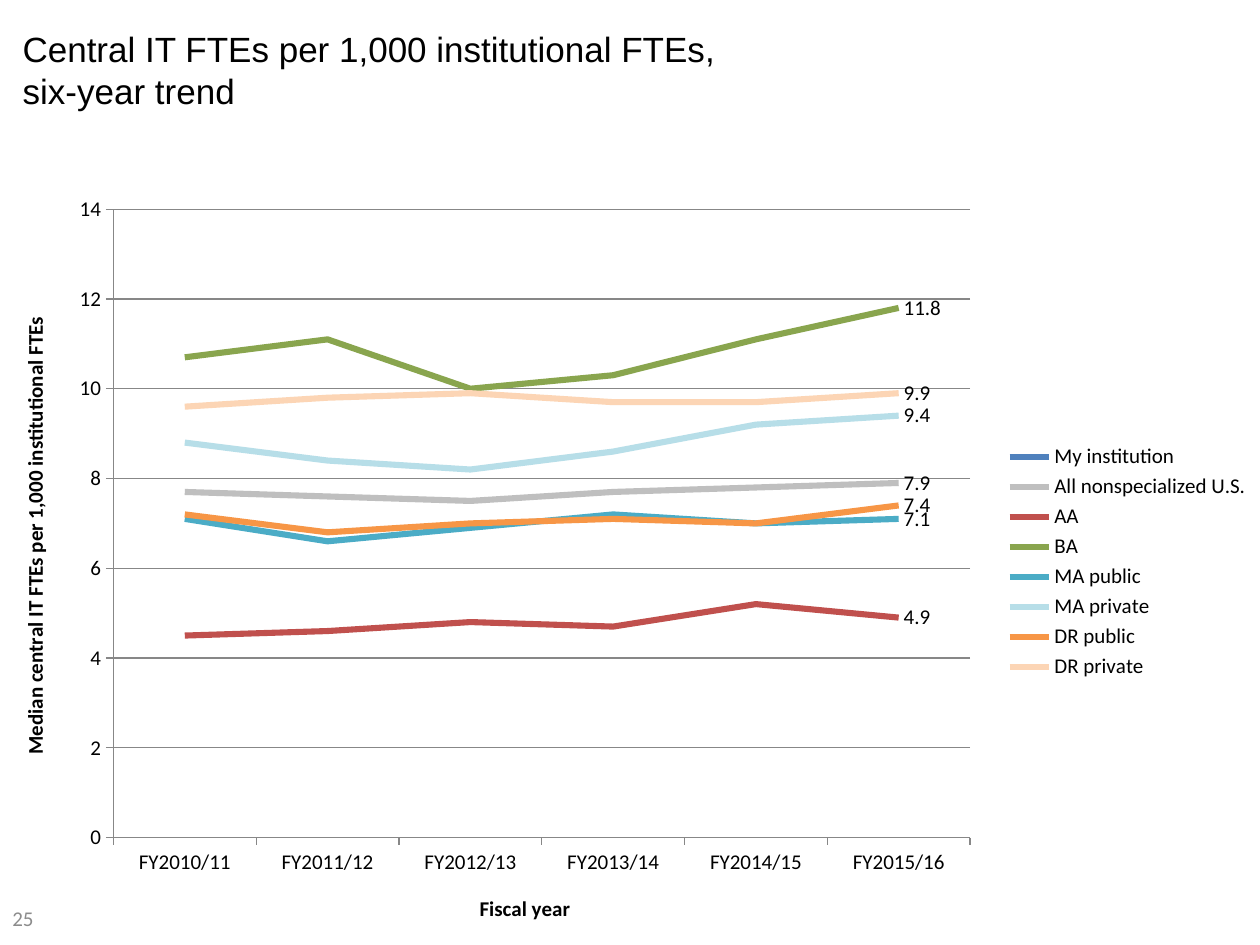
import dataclasses

import pptx
import pptx.chart.data
import pptx.dml.color
import pptx.enum.chart
import pptx.enum.text
import pptx.oxml
import pptx.oxml.ns
import pptx.util

Cm = pptx.util.Cm
Pt = pptx.util.Pt


@dataclasses.dataclass(frozen=True)
class Theme:
    """Colours, fonts and type sizes of the slide."""
    title_font: str = "Arial"
    body_font: str = "Calibri"
    title_size: int = 20
    body_size: int = 12
    line_width: float = 3.5
    ink: str = "000000"
    muted: str = "8C8C8C"
    grid: str = "878787"


THEME = Theme()
CATEGORIES = ["FY2010/11", "FY2011/12", "FY2012/13",
              "FY2013/14", "FY2014/15", "FY2015/16"]
SERIES = [
    ("My institution", "4F81BD", [None] * 6),
    ("All nonspecialized U.S.", "BFBFBF", [7.7, 7.6, 7.5, 7.7, 7.8, 7.9]),
    ("AA", "C0504D", [4.5, 4.6, 4.8, 4.7, 5.2, 4.9]),
    ("BA", "89A54E", [10.7, 11.1, 10, 10.3, 11.1, 11.8]),
    ("MA public", "4BACC6", [7.1, 6.6, 6.9, 7.2, 7, 7.1]),
    ("MA private", "B7DEE8", [8.8, 8.4, 8.2, 8.6, 9.2, 9.4]),
    ("DR public", "F79646", [7.2, 6.8, 7, 7.1, 7, 7.4]),
    ("DR private", "FCD5B5", [9.6, 9.8, 9.9, 9.7, 9.7, 9.9]),
]


def rgb(value):
    """Return a colour from its hex string."""
    return pptx.dml.color.RGBColor.from_string(value)


def style_font(font, name, size, color, bold=False):
    """Set the face, size, colour and weight of a font."""
    font.name, font.size, font.bold = name, Pt(size), bold
    font.color.rgb = rgb(color)


def style_line(line, color, width):
    """Set the colour and width of a line."""
    line.color.rgb = rgb(color)
    line.width = Pt(width)


def set_layout(parent, index, box, inner=False):
    """Fix a chart part to a box given in fractions of the chart."""
    for old in parent.findall(pptx.oxml.ns.qn("c:layout")):
        parent.remove(old)
    target = '<c:layoutTarget val="inner"/>' if inner else ""
    modes = "".join(f'<c:{k}Mode val="edge"/>' for k in "xy")
    sizes = "".join(f'<c:{k} val="{v}"/>' for k, v in zip("xywh", box))
    parent.insert(index, pptx.oxml.parse_xml(
        f'<c:layout {pptx.oxml.ns.nsdecls("c")}><c:manualLayout>'
        f'{target}{modes}{sizes}</c:manualLayout></c:layout>'))


def add_title(s, box, text):
    """Place the slide title in the title placeholder."""
    sp = s.shapes.title
    sp.left, sp.top, sp.width, sp.height = box
    tf = sp.text_frame
    tf.word_wrap = True
    tf.vertical_anchor = pptx.enum.text.MSO_ANCHOR.TOP
    p = tf.paragraphs[0]
    p.text = text
    p.alignment = pptx.enum.text.PP_ALIGN.LEFT
    for r in p.runs:
        style_font(r.font, THEME.title_font, THEME.title_size, THEME.ink)


def style_axis(axis, title):
    """Give an axis its title, line and outside ticks."""
    axis.has_title = True
    p = axis.axis_title.text_frame.paragraphs[0]
    p.text = title
    style_font(p.runs[0].font, THEME.body_font, THEME.body_size, THEME.ink, True)
    axis.major_tick_mark = pptx.enum.chart.XL_TICK_MARK.OUTSIDE
    axis.minor_tick_mark = pptx.enum.chart.XL_TICK_MARK.NONE
    style_line(axis.format.line, THEME.grid, 0.75)


def style_series(series, color):
    """Colour a line and label its last point."""
    series.smooth = False
    series.marker.style = pptx.enum.chart.XL_MARKER_STYLE.NONE
    style_line(series.format.line, color, THEME.line_width)
    if series.values[-1] is not None:
        label = series.points[len(CATEGORIES) - 1].data_label
        style_font(label.font, THEME.body_font, THEME.body_size, THEME.ink)
        label.position = pptx.enum.chart.XL_LABEL_POSITION.RIGHT


def add_trend_chart(s, box):
    """Place the line chart with its axes and legend."""
    data = pptx.chart.data.CategoryChartData()
    data.categories = CATEGORIES
    for name, _, values in SERIES:
        data.add_series(name, values)
    chart = s.shapes.add_chart(pptx.enum.chart.XL_CHART_TYPE.LINE, *box, data).chart
    style_font(chart.font, THEME.body_font, THEME.body_size, THEME.ink)
    chart.has_title = False
    plot = chart.plots[0]
    plot.vary_by_categories = False
    for series, (_, color, _) in zip(plot.series, SERIES):
        style_series(series, color)

    style_axis(chart.category_axis, "Fiscal year")
    axis = chart.value_axis
    style_axis(axis, "Median central IT FTEs per 1,000 institutional FTEs")
    axis.minimum_scale, axis.maximum_scale, axis.major_unit = 0, 14, 2
    axis.tick_labels.number_format = "0"
    axis.tick_labels.number_format_is_linked = False
    axis.has_major_gridlines = True
    style_line(axis.major_gridlines.format.line, THEME.grid, 0.75)

    chart.has_legend = True
    legend = chart.legend
    legend.position = pptx.enum.chart.XL_LEGEND_POSITION.RIGHT
    legend.include_in_layout = False
    style_font(legend.font, THEME.body_font, THEME.body_size, THEME.ink)
    set_layout(plot._element.getparent(), 0, (0.09, 0.04, 0.68, 0.82), inner=True)
    set_layout(legend._element, 1, (0.79, 0.34, 0.21, 0.32))


def add_page_number(s, box, text):
    """Place the page number in the lower left corner."""
    tf = s.shapes.add_textbox(*box).text_frame
    tf.word_wrap = True
    tf.vertical_anchor = pptx.enum.text.MSO_ANCHOR.MIDDLE
    tf.text = text
    style_font(tf.paragraphs[0].runs[0].font,
               THEME.body_font, THEME.body_size, THEME.muted)


def main():
    """Build the slide and save it."""
    prs = pptx.Presentation()
    prs.slide_width, prs.slide_height = Cm(25.4), Cm(19.05)
    s = prs.slides.add_slide(prs.slide_layouts[5])
    add_title(s, (Cm(0.2), Cm(0.43), Cm(23.75), Cm(2.54)),
              "Central IT FTEs per 1,000 institutional FTEs,\nsix-year trend")
    add_trend_chart(s, (Cm(0), Cm(3.6), Cm(25.4), Cm(15.45)))
    add_page_number(s, (Cm(0), Cm(17.98), Cm(2.74), Cm(1.07)), "25")
    prs.save("out.pptx")


if __name__ == "__main__":
    main()
